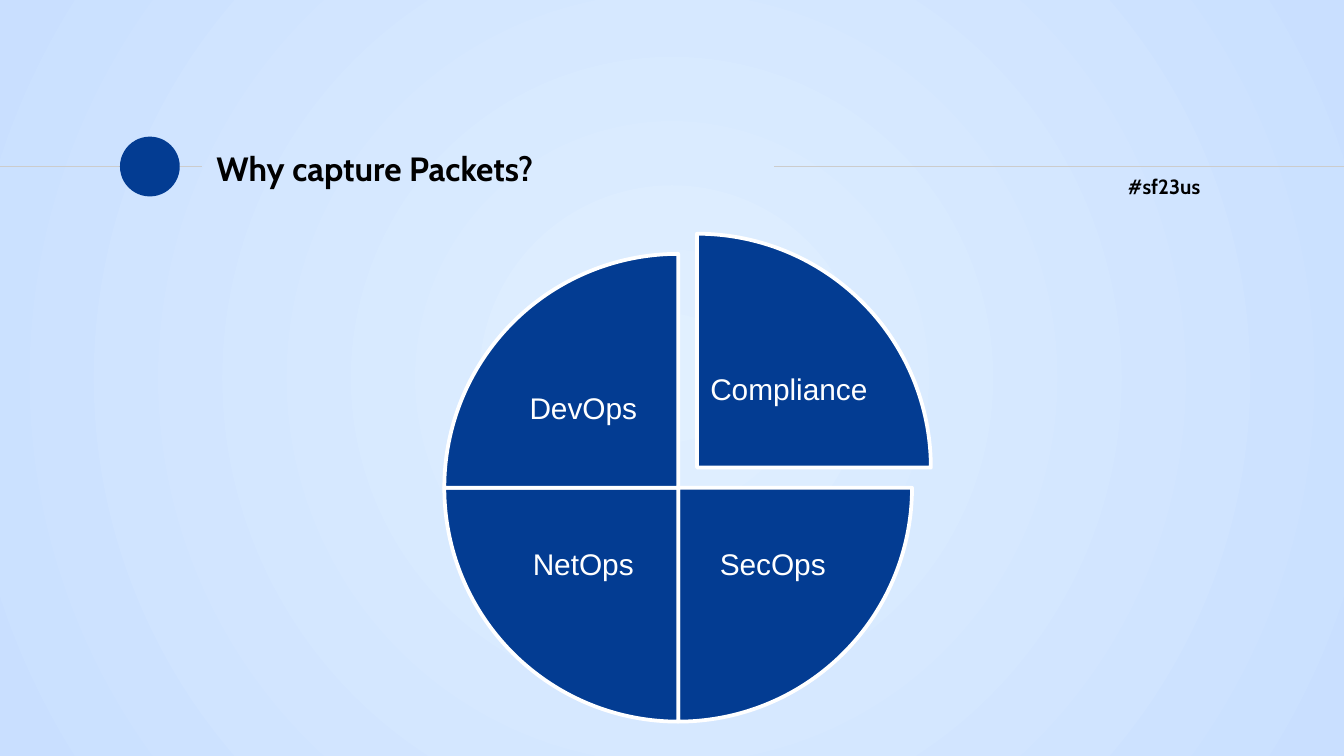
"""Build a slide with a four-part pie of reasons to capture packets."""
from dataclasses import dataclass

import pptx
import pptx.dml.color
import pptx.enum.shapes
import pptx.enum.text
import pptx.oxml
import pptx.oxml.ns
import pptx.util

SLIDE_WIDTH = pptx.util.Inches(10)
SLIDE_HEIGHT = SLIDE_WIDTH * 9 // 16
BLUE, WHITE, BLACK, GREY = "033C92", "FFFFFF", "000000", "CCCCCC"
RULE_ROW = 22.04
QUARTER = 54


@dataclass(frozen=True)
class Area:
    """A rectangle in percent of the slide's width and height."""
    left: float
    top: float
    width: float
    height: float

    def lengths(self) -> tuple[int, int, int, int]:
        """Return left, top, width and height as slide lengths."""
        return across(self.left), down(self.top), across(self.width), down(self.height)


@dataclass(frozen=True)
class Slice:
    """A labelled quarter of the pie, with its label's corner and its pull-out."""
    label: str
    label_left: float
    label_top: float
    shift_right: float = 0
    shift_down: float = 0


SLICES = (
    Slice("SecOps", 51.1, 65.64),
    Slice("NetOps", 37, 65.64),
    Slice("DevOps", 37, 45.02),
    Slice("Compliance", 52.3, 42.5, 1.4, -2.67),
)


def across(percent: float) -> int:
    """Turn a share of the slide's width into a length."""
    return round(SLIDE_WIDTH * percent / 100)


def down(percent: float) -> int:
    """Turn a share of the slide's height into a length."""
    return round(SLIDE_HEIGHT * percent / 100)


def color(value: str) -> pptx.dml.color.RGBColor:
    """Turn a hex string into a colour."""
    return pptx.dml.color.RGBColor.from_string(value)


def paint_background(slide: pptx.slide.Slide) -> None:
    """Fill the background with a round gradient from its centre."""
    fill = slide.background.fill
    fill.gradient()
    for stop, value in zip(fill.gradient_stops, ("E1F0FF", "C9DFFF")):
        stop.color.rgb = color(value)
    linear = slide.element.xpath(".//p:bg//a:lin")[0]
    circle = pptx.oxml.parse_xml(
        f'<a:path {pptx.oxml.ns.nsdecls("a")} path="circle">'
        '<a:fillToRect l="50000" t="50000" r="50000" b="50000"/></a:path>')
    linear.getparent().replace(linear, circle)


def write(box: pptx.shapes.base.BaseShape, area: Area, text: str, size: float,
          font: str, value: str, inset: float = 0.1, bold: bool = False) -> None:
    """Place a text shape and set its only paragraph."""
    box.left, box.top, box.width, box.height = area.lengths()
    frame = box.text_frame
    frame.text = text
    frame.word_wrap = True
    frame.auto_size = pptx.enum.text.MSO_AUTO_SIZE.NONE
    frame.margin_left = frame.margin_right = pptx.util.Inches(inset)
    frame.margin_top = frame.margin_bottom = pptx.util.Inches(inset)
    span = frame.paragraphs[0].runs[0]
    span.font.name = font
    span.font.size = pptx.util.Pt(size)
    span.font.bold = bold
    span.font.color.rgb = color(value)


def draw_rule(slide: pptx.slide.Slide, start: float, end: float) -> None:
    """Draw a thin level line between two shares of the width."""
    rule = slide.shapes.add_connector(
        pptx.enum.shapes.MSO_CONNECTOR.STRAIGHT,
        across(start), down(RULE_ROW), across(end), down(RULE_ROW))
    rule.line.color.rgb = color(GREY)
    rule.line.width = pptx.util.Pt(0.75)
    rule.element.spPr.append(
        pptx.oxml.parse_xml(f'<a:effectLst {pptx.oxml.ns.nsdecls("a")}/>'))


def draw_shape(slide: pptx.slide.Slide, kind: pptx.enum.shapes.MSO_SHAPE,
               area: Area) -> pptx.shapes.autoshape.Shape:
    """Draw a plain blue shape without an outline."""
    shape = slide.shapes.add_shape(kind, *area.lengths())
    shape.shadow.inherit = False
    shape.fill.solid()
    shape.fill.fore_color.rgb = color(BLUE)
    shape.line.fill.background()
    return shape


def draw_slice(slide: pptx.slide.Slide, part: Slice, index: int) -> None:
    """Draw one quarter of the pie and its label."""
    area = Area(33.06 + part.shift_right, 33.59 + part.shift_down, 34.8, 61.87)
    wedge = draw_shape(slide, pptx.enum.shapes.MSO_SHAPE.PIE, area)
    wedge.adjustments[0] = index * QUARTER
    wedge.adjustments[1] = (index + 1) % len(SLICES) * QUARTER
    wedge.line.color.rgb = color(WHITE)
    wedge.line.width = pptx.util.Pt(2)
    label = slide.shapes.add_textbox(0, 0, 0, 0)
    write(label, Area(part.label_left, part.label_top, 12.8, 18.31),
          part.label, 16, "Arial", WHITE, inset=0.02)
    label.text_frame.vertical_anchor = pptx.enum.text.MSO_ANCHOR.MIDDLE
    para = label.text_frame.paragraphs[0]
    para.alignment = pptx.enum.text.PP_ALIGN.CENTER
    para.line_spacing = 0.9


def main() -> None:
    """Build and save the deck."""
    deck = pptx.Presentation()
    deck.slide_width, deck.slide_height = SLIDE_WIDTH, SLIDE_HEIGHT
    slide = deck.slides.add_slide(deck.slide_layouts.get_by_name("Title Only"))
    paint_background(slide)

    title = slide.shapes.title
    write(title, Area(15.1, 17.96, 44.8, 8.53), "Why capture Packets?",
          18, "Cabin", BLACK, bold=True)
    title.text_frame.vertical_anchor = pptx.enum.text.MSO_ANCHOR.MIDDLE
    title.text_frame.paragraphs[0].alignment = pptx.enum.text.PP_ALIGN.LEFT

    write(slide.shapes.add_textbox(0, 0, 0, 0), Area(82.94, 21.27, 11.2, 10.13),
          "#sf23us", 11, "Cabin", BLACK, bold=True)
    draw_rule(slide, 0, 15)
    draw_rule(slide, 57.6, 100)
    draw_shape(slide, pptx.enum.shapes.MSO_SHAPE.OVAL, Area(8.93, 18.08, 4.45, 7.91))

    for index, part in enumerate(SLICES):
        draw_slice(slide, part, index)
    deck.save("out.pptx")


if __name__ == "__main__":
    main()
